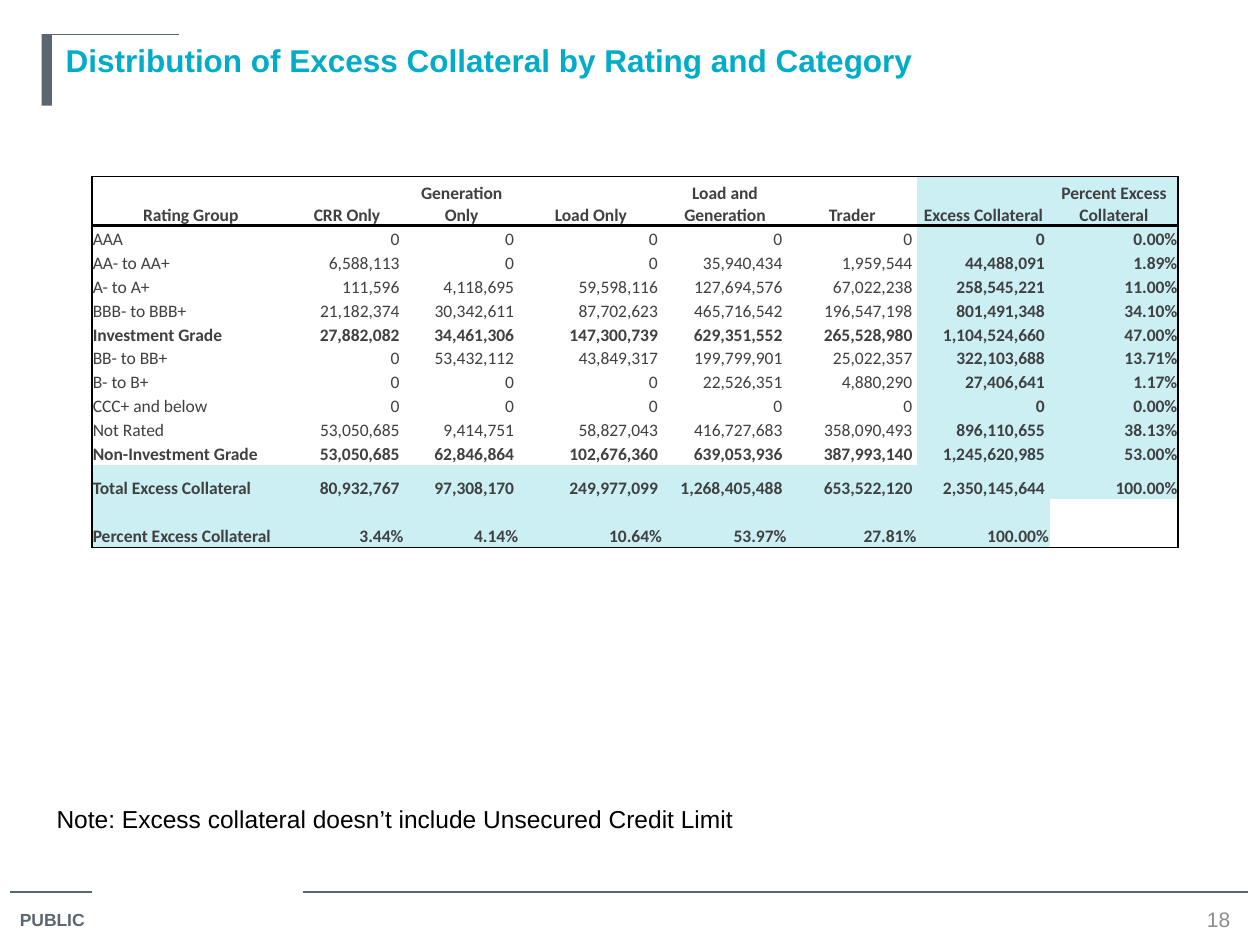
import pptx
import pptx.util
import pptx.dml.color
import pptx.enum.text
import pptx.enum.shapes
import pptx.oxml.ns
import lxml.etree as etree

Cm = pptx.util.Cm
Pt = pptx.util.Pt
ALIGN = pptx.enum.text.PP_ALIGN
ANCHOR = pptx.enum.text.MSO_ANCHOR
SIZE = pptx.enum.text.MSO_AUTO_SIZE
SLATE, TINT, BLACK = "5B6770", "CCEFF4", "000000"

WIDTHS = [3.99, 2.31, 2.31, 2.9, 2.51, 2.62, 2.67, 2.59]
HEIGHTS = [0.99, 0.5] + [0.48] * 9 + [0.7, 0.97]
HEADS = ["Rating Group", "CRR Only", "Generation Only", "Load Only",
         "Load and Generation", "Trader", "Excess Collateral",
         "Percent Excess Collateral"]
ROWS = [
    ("AAA", 0, 0, 0, 0, 0, 0, "0.00%"),
    ("AA- to AA+", 6588113, 0, 0, 35940434, 1959544, 44488091, "1.89%"),
    ("A- to A+", 111596, 4118695, 59598116, 127694576, 67022238, 258545221, "11.00%"),
    ("BBB- to BBB+", 21182374, 30342611, 87702623, 465716542, 196547198, 801491348, "34.10%"),
    ("Investment Grade", 27882082, 34461306, 147300739, 629351552, 265528980, 1104524660, "47.00%"),
    ("BB- to BB+", 0, 53432112, 43849317, 199799901, 25022357, 322103688, "13.71%"),
    ("B- to B+", 0, 0, 0, 22526351, 4880290, 27406641, "1.17%"),
    ("CCC+ and below", 0, 0, 0, 0, 0, 0, "0.00%"),
    ("Not Rated", 53050685, 9414751, 58827043, 416727683, 358090493, 896110655, "38.13%"),
    ("Non-Investment Grade", 53050685, 62846864, 102676360, 639053936, 387993140, 1245620985, "53.00%"),
    ("Total Excess Collateral", 80932767, 97308170, 249977099, 1268405488, 653522120, 2350145644, "100.00%"),
    ("Percent Excess Collateral", "3.44%", "4.14%", "10.64%", "53.97%", "27.81%", "100.00%", ""),
]
BOLD = {0, 5, 10, 11, 12}


def hue(code):
    return pptx.dml.color.RGBColor.from_string(code)


def put(item, style):
    for key, value in style.items():
        setattr(item, key, value)


def write(frame, text, size, color, bold=False, face="Arial", align=ALIGN.LEFT):
    para = frame.paragraphs[0]
    para.alignment = align
    if text:
        para.add_run().text = text
    font = para.runs[0].font if text else para.font
    put(font, {"name": face, "size": Pt(size), "bold": bold})
    font.color.rgb = hue(color)


def label(slide, box, text, size, color, style, **more):
    frame = slide.shapes.add_textbox(*map(Cm, box)).text_frame
    put(frame, {"word_wrap": True, **style})
    write(frame, text, size, color, **more)


def rule(slide, left, right, top):
    kind = pptx.enum.shapes.MSO_CONNECTOR.STRAIGHT
    line = slide.shapes.add_connector(kind, Cm(left), Cm(top), Cm(right), Cm(top))
    line.line.width = Pt(0.75)
    line.line.color.rgb = hue(SLATE)
    etree.SubElement(line._element.spPr, pptx.oxml.ns.qn("a:effectLst"))


def bar(slide, box):
    kind = pptx.enum.shapes.MSO_SHAPE.RECTANGLE
    shape = slide.shapes.add_shape(kind, *map(Cm, box))
    shape.shadow.inherit = False
    shape.fill.solid()
    shape.fill.fore_color.rgb = hue(SLATE)
    shape.line.fill.background()


def edge(cell, sides):
    qn = pptx.oxml.ns.qn
    props = cell._tc.get_or_add_tcPr()
    for side in "LRTB":
        width = sides.get(side, 0)
        line = etree.SubElement(props, qn("a:ln" + side), w=str(Pt(width)))
        if width:
            fill = etree.SubElement(line, qn("a:solidFill"))
            etree.SubElement(fill, qn("a:srgbClr"), val=BLACK)
        else:
            etree.SubElement(line, qn("a:noFill"))


def sides(row, col):
    found = {}
    if col == 0:
        found["L"] = 1
    if col == len(WIDTHS) - 1:
        found["R"] = 1
    if row < 2:
        found["T"] = row + 1
    if row == 0:
        found["B"] = 2
    if row == len(ROWS):
        found["B"] = 1
    return found


def dress(cell, row, col, value):
    put(cell, {"margin_left": Cm(0.02), "margin_right": Cm(0.02),
               "margin_top": Cm(0.02), "margin_bottom": 0,
               "vertical_anchor": ANCHOR.BOTTOM})
    edge(cell, sides(row, col))
    if value != "" and (col > 5 or row > 10):
        cell.fill.solid()
        cell.fill.fore_color.rgb = hue(TINT)
    else:
        cell.fill.background()
    text = f"{value:,} " if isinstance(value, int) else value
    align = ALIGN.CENTER if row == 0 else ALIGN.RIGHT if col else ALIGN.LEFT
    write(cell.text_frame, text, 10, "404040", row in BOLD or col > 5, "Calibri", align)


def grid(slide):
    data = [HEADS, *ROWS]
    box = (1.85, 3.56, sum(WIDTHS), sum(HEIGHTS))
    table = slide.shapes.add_table(len(data), len(HEADS), *map(Cm, box)).table
    put(table, {"first_row": False, "horz_banding": False})
    for col, width in zip(table.columns, WIDTHS):
        col.width = Cm(width)
    for row, height in zip(table.rows, HEIGHTS):
        row.height = Cm(height)
    for row, values in enumerate(data):
        for col, value in enumerate(values):
            dress(table.cell(row, col), row, col, value)


def head(slide, text):
    title = slide.shapes.title
    put(title, {"left": Cm(1.07), "top": Cm(0.69), "width": Cm(23.5), "height": Cm(3.18)})
    put(title.text_frame, {"vertical_anchor": ANCHOR.TOP, "word_wrap": True,
                           "auto_size": SIZE.NONE})
    write(title.text_frame, text, 18, "00ACC8", True)


def main():
    deck = pptx.Presentation()
    put(deck, {"slide_width": Cm(25.4), "slide_height": Cm(19.05)})
    slide = deck.slides.add_slide(deck.slide_layouts[5])
    rule(slide, 0.2, 1.86, 17.98)
    rule(slide, 6.1, 25.15, 17.98)
    grow = {"auto_size": SIZE.SHAPE_TO_FIT_TEXT}
    label(slide, (0.15, 18.2, 1.96, 0.7), "PUBLIC", 10, SLATE,
          {**grow, "word_wrap": False}, bold=True)
    bar(slide, (0.84, 0.69, 0.21, 1.44))
    rule(slide, 0.84, 3.61, 0.69)
    head(slide, "Distribution of Excess Collateral by Rating and Category")
    label(slide, (23.93, 18.24, 1.27, 0.58), "18", 12, "8C8C8C",
          {"vertical_anchor": ANCHOR.MIDDLE}, align=ALIGN.CENTER)
    label(slide, (0.89, 16.08, 23.16, 0.86),
          "Note: Excess collateral doesn’t include Unsecured Credit Limit",
          14, BLACK, grow)
    grid(slide)
    deck.save("out.pptx")


if __name__ == "__main__":
    main()
